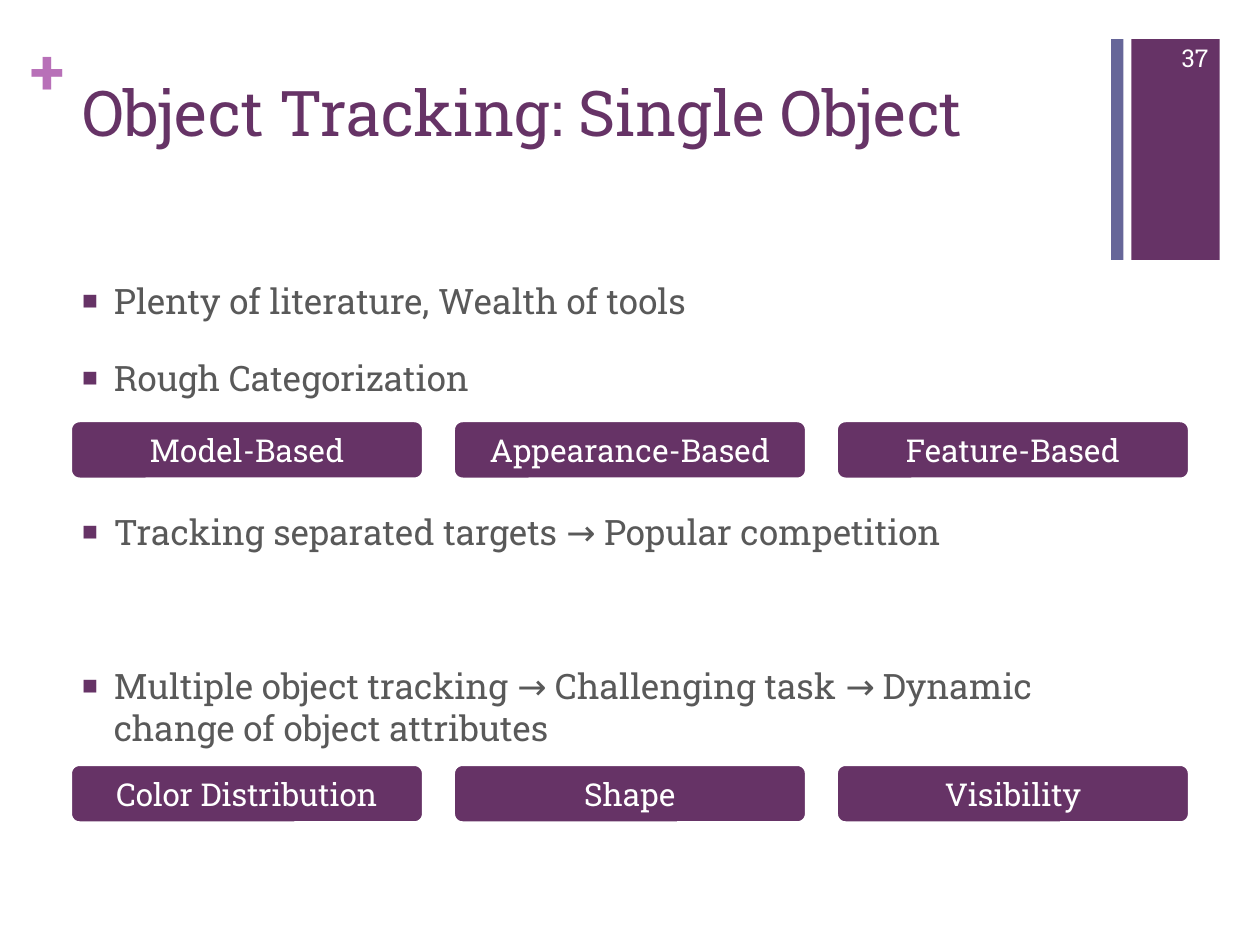
import lxml.etree
import pptx
import pptx.dml.color
import pptx.enum.shapes
import pptx.enum.text
import pptx.oxml.ns
import pptx.util

Cm, Pt = pptx.util.Cm, pptx.util.Pt
RGBColor = pptx.dml.color.RGBColor
MSO_SHAPE = pptx.enum.shapes.MSO_SHAPE
PP_ALIGN = pptx.enum.text.PP_ALIGN
MSO_ANCHOR = pptx.enum.text.MSO_ANCHOR
MSO_AUTO_SIZE = pptx.enum.text.MSO_AUTO_SIZE
qn = pptx.oxml.ns.qn

FONT = "Roboto Slab"
PURPLE = RGBColor(0x66, 0x33, 0x66)
BLUE = RGBColor(0x66, 0x66, 0x99)
ORCHID = RGBColor(0xB8, 0x70, 0xB8)
GREY = RGBColor(0x59, 0x59, 0x59)
WHITE = RGBColor(0xFF, 0xFF, 0xFF)


def add_run(p, text, size, color, bold=False):
    r = p.add_run()
    r.text = text
    r.font.name = FONT
    r.font.size = Pt(size)
    r.font.color.rgb = color
    r.font.bold = bold


def add_box(s, kind, left, top, width, height, fill):
    sp = s.shapes.add_shape(kind, Cm(left), Cm(top), Cm(width), Cm(height))
    sp.shadow.inherit = False
    sp.fill.solid()
    sp.fill.fore_color.rgb = fill
    sp.line.fill.background()
    return sp


prs = pptx.Presentation()
prs.slide_width, prs.slide_height = Cm(25.4), Cm(19.05)
s = prs.slides.add_slide(prs.slide_layouts[1])

# Corner bars
add_box(s, MSO_SHAPE.RECTANGLE, 22.81, 0.79, 1.78, 4.45, PURPLE)
add_box(s, MSO_SHAPE.RECTANGLE, 22.4, 0.79, 0.25, 4.45, BLUE)

# Plus sign
sp = s.shapes.add_textbox(Cm(0.61), Cm(0.64), Cm(0.74), Cm(1.55))
tf = sp.text_frame
tf.margin_left = tf.margin_right = tf.margin_top = tf.margin_bottom = 0
add_run(tf.paragraphs[0], "+", 36, ORCHID, bold=True)

# Title
sp = s.shapes.title
sp.left, sp.top, sp.width, sp.height = Cm(1.4), Cm(1.35), Cm(20.98), Cm(3.1)
tf = sp.text_frame
tf.auto_size = MSO_AUTO_SIZE.NONE
tf.vertical_anchor = MSO_ANCHOR.TOP
p = tf.paragraphs[0]
p.alignment = PP_ALIGN.LEFT
add_run(p, "Object Tracking: Single Object", 36, PURPLE)

# Bullet list: text and space before, leaving room for the button rows
bullets = [
    ("Plenty of literature, Wealth of tools", 0),
    ("Rough Categorization", 20),
    ("Tracking separated targets → Popular competition", 64),
    ("Multiple object tracking → Challenging task → Dynamic "
     "change of object attributes", 64),
]
sp = s.placeholders[1]
sp.left, sp.top, sp.width, sp.height = Cm(1.4), Cm(5.51), Cm(20.98), Cm(11.51)
tf = sp.text_frame
tf.auto_size = MSO_AUTO_SIZE.NONE
for i, (text, before) in enumerate(bullets):
    p = tf.paragraphs[0] if i == 0 else tf.add_paragraph()
    pPr = p._p.get_or_add_pPr()
    pPr.set("marL", str(Cm(0.64)))
    pPr.set("indent", str(-Cm(0.64)))
    color = lxml.etree.SubElement(pPr, qn("a:buClr"))
    lxml.etree.SubElement(color, qn("a:srgbClr"), val=str(PURPLE))
    lxml.etree.SubElement(pPr, qn("a:buSzPct"), val="75000")
    lxml.etree.SubElement(pPr, qn("a:buChar"), char="■")
    p.line_spacing = Pt(24)
    p.space_before = Pt(before)
    add_run(p, text, 20, GREY)

# Button rows
rows = [
    (8.46, ["Model-Based", "Appearance-Based", "Feature-Based"]),
    (15.39, ["Color Distribution", "Shape", "Visibility"]),
]
for top, labels in rows:
    for col, label in enumerate(labels):
        sp = add_box(s, MSO_SHAPE.ROUNDED_RECTANGLE,
                     1.4 + col * 7.72, top, 7.16, 1.22, PURPLE)
        sp.line.color.rgb = WHITE
        sp.line.width = Pt(3)
        tf = sp.text_frame
        tf.vertical_anchor = MSO_ANCHOR.MIDDLE
        p = tf.paragraphs[0]
        p.alignment = PP_ALIGN.CENTER
        add_run(p, label, 18, WHITE)

# Slide number
sp = s.shapes.add_textbox(Cm(23.06), Cm(0.66), Cm(1.55), Cm(1.02))
tf = sp.text_frame
tf.word_wrap = True
tf.vertical_anchor = MSO_ANCHOR.MIDDLE
p = tf.paragraphs[0]
p.alignment = PP_ALIGN.RIGHT
add_run(p, "37", 14, WHITE)

prs.save("out.pptx")
